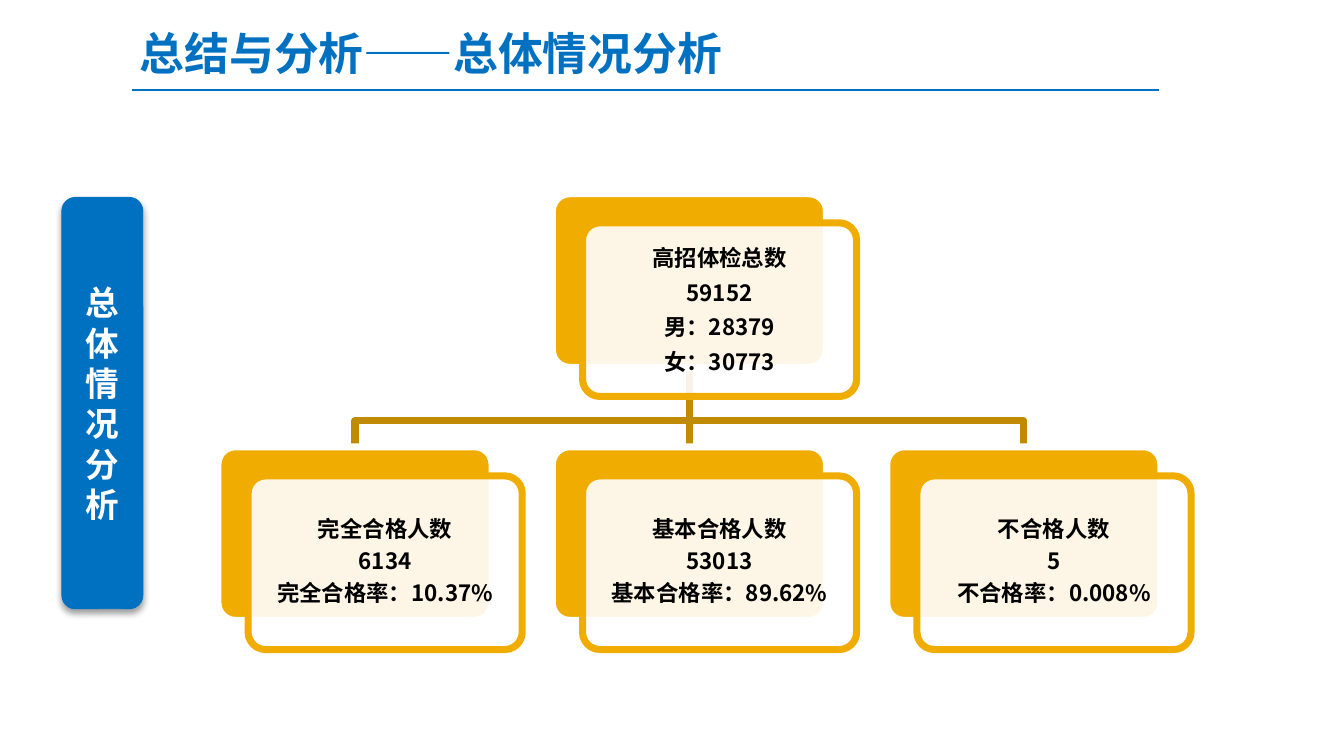
"""Build the slide summarising the overall health-check results."""
import pptx
import pptx.dml.color
import pptx.enum.shapes
import pptx.enum.text
import pptx.oxml
import pptx.oxml.ns
import pptx.util
from pptx.util import Cm

COLOURS = {
    "blue": "0070C0", "gold": "F0AD00", "brown": "C08B00",
    "white": "FFFFFF", "black": "000000",
}
FONT = "Noto Sans CJK SC"
NS = pptx.oxml.ns.nsdecls("a")
SHAPES = pptx.enum.shapes.MSO_SHAPE
CENTER = pptx.enum.text.PP_ALIGN.CENTER
MIDDLE = pptx.enum.text.MSO_ANCHOR.MIDDLE


def rgb(name):
    return pptx.dml.color.RGBColor.from_string(COLOURS[name])


def add_run(paragraph, text, size, colour):
    run = paragraph.add_run()
    run.text = text
    run.font.size = pptx.util.Pt(size)
    run.font.bold = True
    run.font.name = FONT
    run.font.color.rgb = rgb(colour)
    run.font._element.append(pptx.oxml.parse_xml(f'<a:ea {NS} typeface="{FONT}"/>'))


deck = pptx.Presentation()
deck.slide_width, deck.slide_height = Cm(25.4), Cm(14.28)
slide = deck.slides.add_slide(deck.slide_layouts[6])
shapes = slide.shapes

title_rule = shapes.add_connector(
    pptx.enum.shapes.MSO_CONNECTOR.STRAIGHT, Cm(2.49), Cm(1.7), Cm(21.9), Cm(1.7))
title_rule.line.color.rgb = rgb("blue")
title_rule.line.width = pptx.util.Pt(1.25)
title_rule._element.spPr.append(pptx.oxml.parse_xml(f"<a:effectLst {NS}/>"))

title = shapes.add_textbox(Cm(2.39), Cm(0.15), Cm(11.76), Cm(1.5))
title.text_frame.word_wrap = False
title.text_frame.paragraphs[0].line_spacing = 1.2
add_run(title.text_frame.paragraphs[0], "总结与分析——总体情况分析", 24, "blue")

section = shapes.add_shape(SHAPES.ROUNDED_RECTANGLE, Cm(1.17), Cm(3.73), Cm(1.53), Cm(7.77))
section.fill.solid()
section.fill.fore_color.rgb = rgb("blue")
section.line.color.rgb = rgb("blue")
section.line.width = pptx.util.Pt(0.5)
section.shadow.inherit = False
section._element.spPr.find(pptx.oxml.ns.qn("a:effectLst")).append(pptx.oxml.parse_xml(
    f'<a:outerShdw {NS} blurRad="44450" dist="25400" dir="5400000" rotWithShape="0">'
    '<a:srgbClr val="000000"><a:alpha val="38000"/></a:srgbClr></a:outerShdw>'))
section.text_frame.word_wrap = True
section.text_frame.vertical_anchor = MIDDLE
section.text_frame.paragraphs[0].alignment = CENTER
add_run(section.text_frame.paragraphs[0], "总体情况分析", 18, "white")

card_width, card_height = Cm(5.18), Cm(3.28)
shift_x, shift_y = Cm(0.57), Cm(0.55)
columns = [Cm(4.12 + 6.32 * i) for i in range(3)]
total_top, result_top = Cm(3.66), Cm(8.44)
trunk_x, trunk_top, branch_y = columns[1] + card_width // 2, total_top + card_height, Cm(7.95)

branches = []
for column in (columns[2], columns[0]):
    branch_x = column + card_width // 2
    outline = shapes.build_freeform(trunk_x, trunk_top)
    outline.add_line_segments(
        [(trunk_x, branch_y), (branch_x, branch_y), (branch_x, result_top)], close=False)
    branch = outline.convert_to_shape()
    branch.fill.background()
    branch.shadow.inherit = False
    branches.append(branch)
trunk = shapes.add_connector(
    pptx.enum.shapes.MSO_CONNECTOR.STRAIGHT, trunk_x, trunk_top, trunk_x, result_top)
trunk._element.spPr.append(pptx.oxml.parse_xml(f"<a:effectLst {NS}/>"))
for link in branches + [trunk]:
    link.line.color.rgb = rgb("brown")
    link.line.width = pptx.util.Pt(3.78)

cards = [
    (columns[1], total_top, pptx.util.Pt(14.4),
     ["高招体检总数", "59152", "男：28379", "女：30773"]),
    (columns[0], result_top, 0.9, ["完全合格人数", "6134", "完全合格率：10.37%"]),
    (columns[1], result_top, 0.9, ["基本合格人数", "53013", "基本合格率：89.62%"]),
    (columns[2], result_top, 0.9, ["不合格人数", "5", "不合格率：0.008%"]),
]
backings = []
for left, top, spacing, lines in cards:
    backing = shapes.add_shape(SHAPES.ROUNDED_RECTANGLE, left, top, card_width, card_height)
    panel = shapes.add_shape(
        SHAPES.ROUNDED_RECTANGLE, left + shift_x, top + shift_y, card_width, card_height)
    for layer, fill, border in ((backing, "gold", "white"), (panel, "white", "gold")):
        layer.adjustments[0] = 0.1
        layer.fill.solid()
        layer.fill.fore_color.rgb = rgb(fill)
        layer.line.color.rgb = rgb(border)
        layer.line.width = pptx.util.Pt(3.78)
        layer.shadow.inherit = False
    panel_colour = panel._element.spPr.find(pptx.oxml.ns.qn("a:solidFill"))[0]
    panel_colour.append(pptx.oxml.parse_xml(f'<a:alpha {NS} val="90000"/>'))
    backings.append(backing)

    frame = panel.text_frame
    frame.word_wrap = True
    frame.vertical_anchor = MIDDLE
    frame.margin_left = frame.margin_right = Cm(0.13)
    frame.margin_top = frame.margin_bottom = Cm(0.13)
    for i, line in enumerate(lines):
        paragraph = frame.add_paragraph() if i else frame.paragraphs[0]
        paragraph.alignment = CENTER
        paragraph.line_spacing = spacing
        paragraph.space_after = pptx.util.Pt(4.2)
        add_run(paragraph, line, 12, "black")

trunk.begin_connect(backings[0], 2)
trunk.end_connect(backings[2], 0)

deck.save("out.pptx")
